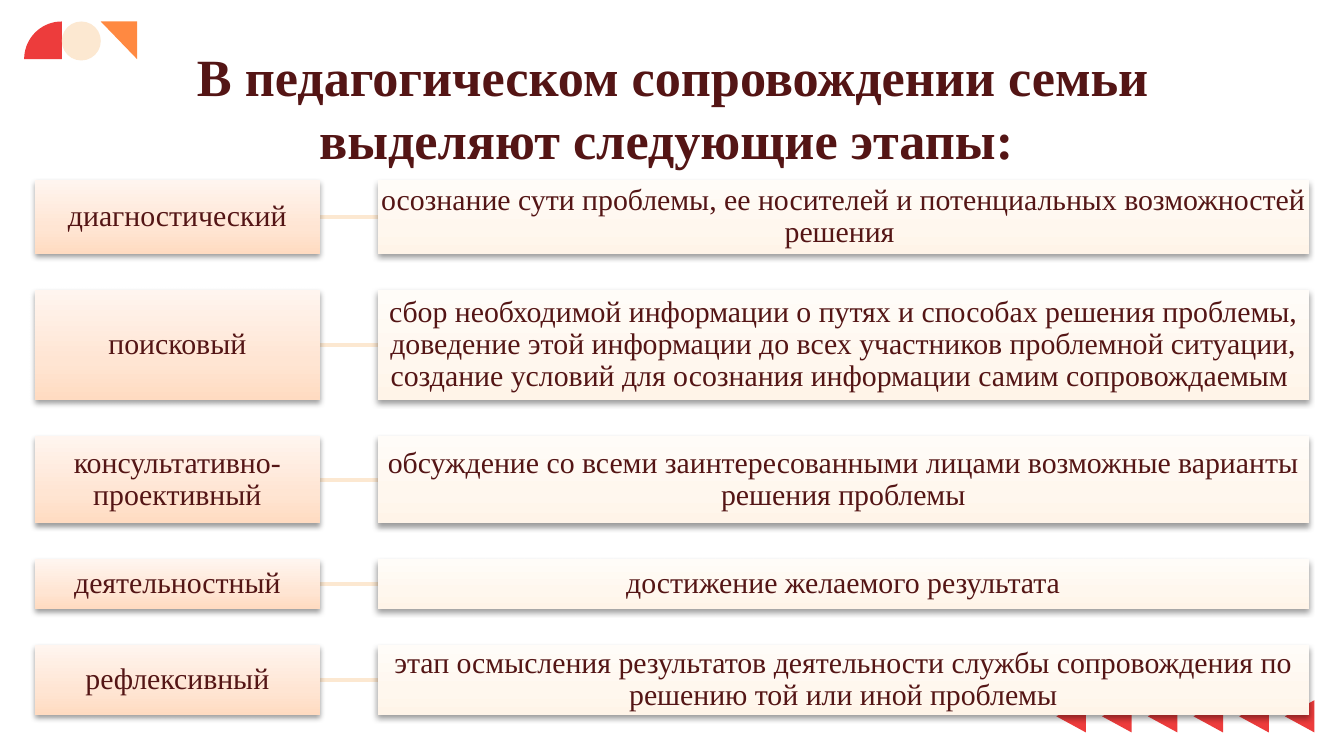
import math
from lxml import etree
from pptx import Presentation
from pptx.dml.color import RGBColor
from pptx.enum.shapes import MSO_CONNECTOR, MSO_SHAPE
from pptx.enum.text import MSO_ANCHOR, PP_ALIGN
from pptx.oxml.ns import qn
from pptx.util import Inches, Pt

RED = RGBColor(0xED, 0x3C, 0x3C)
ORANGE = RGBColor(0xFF, 0x89, 0x41)
CREAM = RGBColor(0xFC, 0xE8, 0xD1)
BROWN = RGBColor(0x54, 0x15, 0x15)
STAGE_STOPS = [(0, RGBColor(0xFF, 0xDB, 0xC1)), (35, RGBColor(0xFF, 0xE5, 0xD3)),
               (100, RGBColor(0xFF, 0xF5, 0xEF))]
DETAIL_STOPS = [(0, RGBColor(0xFF, 0xF4, 0xE8)), (35, RGBColor(0xFF, 0xF7, 0xEE)),
                (100, RGBColor(0xFF, 0xFC, 0xF8))]
TRIANGLE, OVAL, RECTANGLE = MSO_SHAPE.ISOSCELES_TRIANGLE, MSO_SHAPE.OVAL, MSO_SHAPE.RECTANGLE
STRAIGHT = MSO_CONNECTOR.STRAIGHT
CENTER = PP_ALIGN.CENTER
TOP, MIDDLE = MSO_ANCHOR.TOP, MSO_ANCHOR.MIDDLE

STAGE_X, STAGE_W = 0.26, 2.12
DETAIL_X, DETAIL_W = 2.81, 6.93
ROWS_TOP, ROWS_BOTTOM = 1.34, 5.32
ROWS = [
    (0.55, "диагностический",
     "осознание сути проблемы, ее носителей и потенциальных возможностей решения "),
    (0.82, "поисковый",
     "сбор необходимой информации о путях и способах решения проблемы, доведение этой "
     "информации до всех участников проблемной ситуации, создание условий для осознания "
     "информации самим сопровождаемым "),
    (0.65, "консультативно-проективный",
     "обсуждение со всеми заинтересованными лицами возможные варианты решения проблемы"),
    (0.37, "деятельностный", "достижение желаемого результата"),
    (0.52, "рефлексивный",
     "этап осмысления результатов деятельности службы сопровождения по решению той или "
     "иной проблемы"),
]


def set_text(sp, text, size, inset, anchor, bold=False):
    tf = sp.text_frame
    tf.word_wrap = True
    tf.vertical_anchor = anchor
    tf.margin_left = tf.margin_right = tf.margin_top = tf.margin_bottom = Inches(inset)
    tf.text = text
    p = tf.paragraphs[0]
    p.alignment = CENTER
    font = p.runs[0].font
    font.name = "Times New Roman"
    font.size = Pt(size)
    font.bold = bold
    font.color.rgb = BROWN
    return p


def set_solid(sp, color):
    sp.shadow.inherit = False
    sp.fill.solid()
    sp.fill.fore_color.rgb = color
    sp.line.fill.background()


prs = Presentation()
prs.slide_width = Inches(10)
prs.slide_height = Inches(10 * 9 / 16)
s = prs.slides.add_slide(prs.slide_layouts[6])
shapes = s.shapes

for i in range(6):
    sp = shapes.add_shape(TRIANGLE, Inches(9.55 - 0.34 * i), Inches(5.22), Inches(0.24), Inches(0.22))
    sp.rotation = 270
    set_solid(sp, RED)

angles = [math.radians(90 + 5 * i) for i in range(19)]
quarter = [(0.46 + 0.28 * math.cos(a), 0.44 - 0.28 * math.sin(a)) for a in angles] + [(0.46, 0.44)]
corner = [(0.75, 0.16), (1.02, 0.44), (1.02, 0.16)]
for points, color in [(quarter, RED), (corner, ORANGE)]:
    points = [(Inches(x), Inches(y)) for x, y in points]
    builder = shapes.build_freeform(*points[0])
    builder.add_line_segments(points[1:], close=True)
    set_solid(builder.convert_to_shape(), color)

sp = shapes.add_shape(OVAL, Inches(0.46), Inches(0.16), Inches(0.29), Inches(0.29))
set_solid(sp, CREAM)

title = shapes.add_textbox(Inches(0.79), Inches(0.23), Inches(8.43), Inches(0.63))
set_text(title, "В педагогическом сопровождении семьи выделяют следующие этапы: ", 28, 0.1, TOP, True)

gap = (ROWS_BOTTOM - ROWS_TOP - sum(row[0] for row in ROWS)) / (len(ROWS) - 1)
y = ROWS_TOP
for height, stage, detail in ROWS:
    mid = Inches(y + height / 2)
    link = shapes.add_connector(STRAIGHT, Inches(STAGE_X + STAGE_W), mid, Inches(DETAIL_X), mid)
    link.line.color.rgb = CREAM
    link.line.width = Pt(2)
    etree.SubElement(link._element.spPr, qn("a:effectLst"))

    for x, width, text, stops in [(STAGE_X, STAGE_W, stage, STAGE_STOPS),
                                  (DETAIL_X, DETAIL_W, detail, DETAIL_STOPS)]:
        sp = shapes.add_shape(RECTANGLE, Inches(x), Inches(y), Inches(width), Inches(height))
        sp.line.fill.background()
        sp.fill.gradient()
        sp.fill.gradient_angle = 90
        gs_list = sp._element.spPr.find(".//" + qn("a:gsLst"))
        for gs in list(gs_list):
            gs_list.remove(gs)
        for pos, color in stops:
            gs = etree.SubElement(gs_list, qn("a:gs"), pos=str(pos * 1000))
            etree.SubElement(gs, qn("a:srgbClr"), val=str(color))

        sp.shadow.inherit = False
        effects = sp._element.spPr.find(qn("a:effectLst"))
        shadow = etree.SubElement(effects, qn("a:outerShdw"), blurRad=str(Pt(3.1)),
                                  dist=str(Pt(1.6)), dir="5400000", rotWithShape="0")
        black = etree.SubElement(shadow, qn("a:srgbClr"), val="000000")
        etree.SubElement(black, qn("a:alpha"), val="38000")

        p = set_text(sp, text, 16, 0.01, MIDDLE)
        p.line_spacing = 0.9
    y += height + gap

prs.save("out.pptx")
